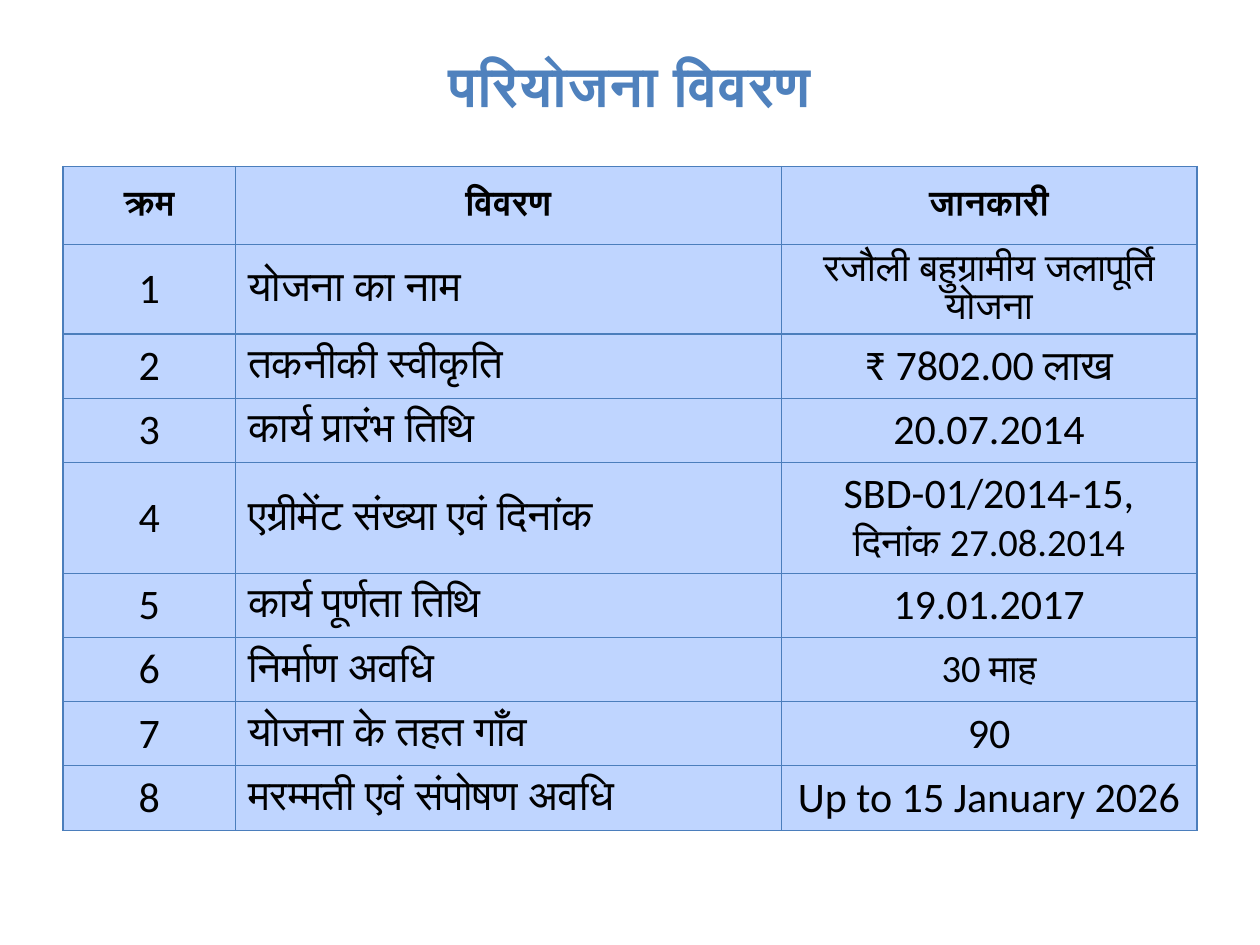
from typing import NamedTuple

from lxml import etree
from pptx import Presentation
from pptx.dml.color import RGBColor
from pptx.enum.text import MSO_ANCHOR, PP_ALIGN
from pptx.oxml.ns import qn
from pptx.util import Inches, Pt

LEFT, CENTER = PP_ALIGN.LEFT, PP_ALIGN.CENTER
MIDDLE = MSO_ANCHOR.MIDDLE
COLORS = {"title": "4F81BD", "text": "000000", "cell": "BFD5FF", "border": "4B7EBC"}
PAGE_WIDTH, PAGE_HEIGHT = 10, 7.5
MARGIN = 0.05 * PAGE_WIDTH
COLUMN_WIDTHS = (1.37, 4.33, 3.3)
TABLE_TOP = 1.32
HEADER_HEIGHT, ROW_HEIGHT = 0.62, 0.51
BORDER_WIDTH = Pt(0.75)


class Line(NamedTuple):
    text: str
    size: int = 24
    bold: bool = False
    font: str = "Calibri"
    color: str = "text"


class Detail(NamedTuple):
    label: str
    lines: tuple[Line, ...]
    height: float = ROW_HEIGHT


HEADINGS = ("क्रम", "विवरण", "जानकारी")
DETAILS = (
    Detail("योजना का नाम", (Line("रजौली बहुग्रामीय जलापूर्ति योजना", 22),), 0.71),
    Detail("तकनीकी स्वीकृति", (Line("₹ 7802.00 लाख"),)),
    Detail("कार्य प्रारंभ तिथि", (Line("20.07.2014"),)),
    Detail("एग्रीमेंट संख्या एवं दिनांक",
           (Line("SBD-01/2014-15,"), Line("दिनांक 27.08.2014", 22)), 0.87),
    Detail("कार्य पूर्णता तिथि", (Line("19.01.2017"),)),
    Detail("निर्माण अवधि", (Line("30 माह", 22),)),
    Detail("योजना के तहत गाँव", (Line("90"),)),
    Detail("मरम्मती एवं संपोषण अवधि", (Line("Up to 15 January 2026"),)),
)


def write_lines(frame, lines: tuple[Line, ...], alignment) -> None:
    for index, line in enumerate(lines):
        para = frame.add_paragraph() if index else frame.paragraphs[0]
        para.alignment = alignment
        span = para.add_run()
        span.text = line.text
        span.font.name = line.font
        span.font.size = Pt(line.size)
        span.font.bold = line.bold
        span.font.color.rgb = RGBColor.from_string(COLORS[line.color])


def add_borders(cell) -> None:
    properties = cell._tc.get_or_add_tcPr()
    for index, side in enumerate(("lnL", "lnR", "lnT", "lnB")):
        border = etree.Element(qn(f"a:{side}"), w=str(BORDER_WIDTH))
        fill = etree.SubElement(border, qn("a:solidFill"))
        etree.SubElement(fill, qn("a:srgbClr"), val=COLORS["border"])
        properties.insert(index, border)


def fill_cell(cell, lines: tuple[Line, ...], alignment) -> None:
    cell.fill.solid()
    cell.fill.fore_color.rgb = RGBColor.from_string(COLORS["cell"])
    cell.vertical_anchor = MIDDLE
    write_lines(cell.text_frame, lines, alignment)
    add_borders(cell)


def add_title(page) -> None:
    title = page.shapes.title
    title.left, title.top = Inches(MARGIN), Inches(0.32)
    title.width, title.height = Inches(PAGE_WIDTH - 2 * MARGIN), Inches(0.7)
    title.text_frame.vertical_anchor = MIDDLE
    write_lines(title.text_frame,
                (Line("परियोजना विवरण", 32, True, "Arial", "title"),), CENTER)


def add_details_table(page) -> None:
    heights = [HEADER_HEIGHT] + [detail.height for detail in DETAILS]
    table = page.shapes.add_table(
        len(heights), len(COLUMN_WIDTHS), Inches(MARGIN), Inches(TABLE_TOP),
        Inches(sum(COLUMN_WIDTHS)), Inches(sum(heights))).table
    table.horz_banding = False
    for column, width in zip(table.columns, COLUMN_WIDTHS):
        column.width = Inches(width)
    for row, height in zip(table.rows, heights):
        row.height = Inches(height)

    for column, heading in enumerate(HEADINGS):
        fill_cell(table.cell(0, column), (Line(heading, 20, True),), CENTER)
    for number, detail in enumerate(DETAILS, start=1):
        fill_cell(table.cell(number, 0), (Line(str(number)),), CENTER)
        fill_cell(table.cell(number, 1), (Line(detail.label),), LEFT)
        fill_cell(table.cell(number, 2), detail.lines, CENTER)


def main() -> None:
    deck = Presentation()
    deck.slide_width, deck.slide_height = Inches(PAGE_WIDTH), Inches(PAGE_HEIGHT)
    page = deck.slides.add_slide(deck.slide_layouts.get_by_name("Title Only"))
    add_title(page)
    add_details_table(page)
    deck.save("out.pptx")


if __name__ == "__main__":
    main()
